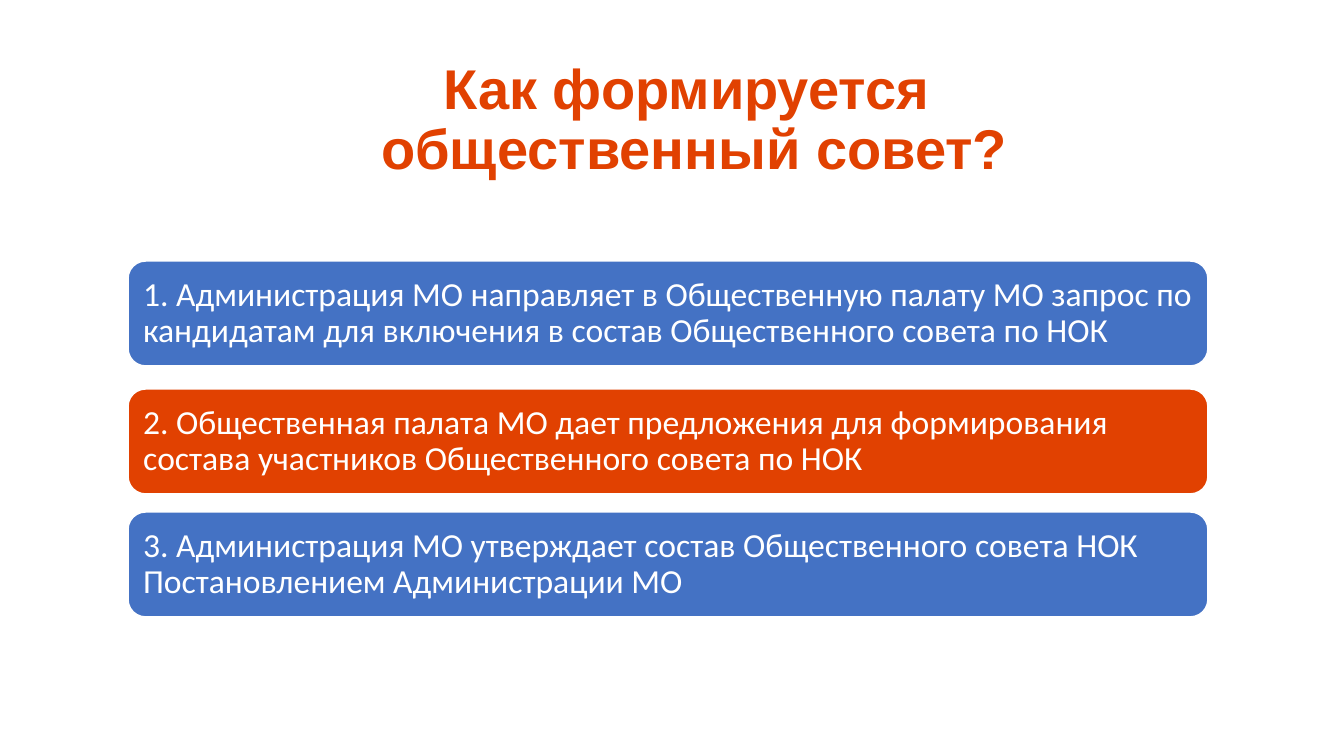
"""Build the slide on how the public council is formed."""
from dataclasses import dataclass

from lxml import etree
from pptx import Presentation
from pptx.dml.color import RGBColor
from pptx.enum import shapes, text
from pptx.oxml import ns
from pptx import util as u


@dataclass(frozen=True)
class Theme:
    """Colours, fonts and type sizes of the slide."""
    blue: str = "4472C4"
    orange: str = "E14101"
    white: str = "FFFFFF"
    title_font: str = "Arial"
    body_font: str = "Calibri"
    title_size: int = 40
    body_size: int = 24
    line_spacing: float = 0.9


@dataclass(frozen=True)
class Step:
    """One step of the procedure."""
    top: float
    fill: str
    words: str


THEME = Theme()
TITLE = ("Как формируется ", "общественный совет?")
STEPS = (
    Step(2.59, THEME.blue,
         "1. Администрация МО направляет в Общественную палату МО запрос по "
         "кандидатам для включения в состав Общественного совета по НОК"),
    Step(3.86, THEME.orange,
         "2. Общественная палата МО дает предложения для формирования "
         "состава участников Общественного совета по НОК"),
    Step(5.08, THEME.blue,
         "3. Администрация МО утверждает состав Общественного совета НОК "
         "Постановлением Администрации МО"),
)


def apply(target: object, values: dict) -> None:
    """Set each named attribute of the target."""
    for name, value in values.items():
        setattr(target, name, value)


def add_run(p, words: str, color: str, align, font: dict):
    """Add a formatted run to a paragraph and return it."""
    apply(p, {"alignment": align, "line_spacing": THEME.line_spacing})
    r = p.add_run()
    r.text = words
    apply(r.font, font)
    r.font.color.rgb = RGBColor.from_string(color)
    return r


def outline(r, color: str, width: float) -> None:
    """Give the letters of a run an outline."""
    ln = etree.Element(ns.qn("a:ln"), w=str(u.Pt(width)))
    fill = etree.SubElement(ln, ns.qn("a:solidFill"))
    etree.SubElement(fill, ns.qn("a:srgbClr"), val=color)
    r.font._element.insert(0, ln)


def add_title(s) -> None:
    """Draw the two-line title."""
    sp = s.shapes.add_textbox(u.Inches(1.16), u.Inches(-0.1),
                              u.Inches(11.45), u.Inches(2.61))
    tf = sp.text_frame
    apply(tf, {"word_wrap": True, "vertical_anchor": text.MSO_ANCHOR.MIDDLE})
    font = {"name": THEME.title_font, "size": u.Pt(THEME.title_size), "bold": True}
    for i, words in enumerate(TITLE):
        p = tf.add_paragraph() if i else tf.paragraphs[0]
        r = add_run(p, words, THEME.orange, text.PP_ALIGN.CENTER, font)
        outline(r, THEME.white, 0.75)


def add_step(s, step: Step) -> None:
    """Draw one step as a rounded bar with its text."""
    sp = s.shapes.add_shape(shapes.MSO_SHAPE.ROUNDED_RECTANGLE, u.Inches(1.27),
                            u.Inches(step.top), u.Inches(10.71), u.Inches(1.04))
    sp.shadow.inherit = False
    sp.fill.solid()
    sp.fill.fore_color.rgb = RGBColor.from_string(step.fill)
    sp.line.color.rgb = RGBColor.from_string(THEME.white)
    sp.line.width = u.Pt(1)
    tf = sp.text_frame
    inset = u.Inches(0.1)
    apply(tf, {"word_wrap": True, "vertical_anchor": text.MSO_ANCHOR.MIDDLE,
               "margin_left": inset, "margin_right": inset,
               "margin_top": inset, "margin_bottom": inset})
    add_run(tf.paragraphs[0], step.words, THEME.white, text.PP_ALIGN.LEFT,
            {"name": THEME.body_font, "size": u.Pt(THEME.body_size)})


def main() -> None:
    """Build and save the presentation."""
    prs = Presentation()
    apply(prs, {"slide_width": u.Inches(13.33), "slide_height": u.Inches(7.5)})
    s = prs.slides.add_slide(prs.slide_layouts[6])
    for step in STEPS:
        add_step(s, step)
    add_title(s)
    prs.save("out.pptx")


if __name__ == "__main__":
    main()
